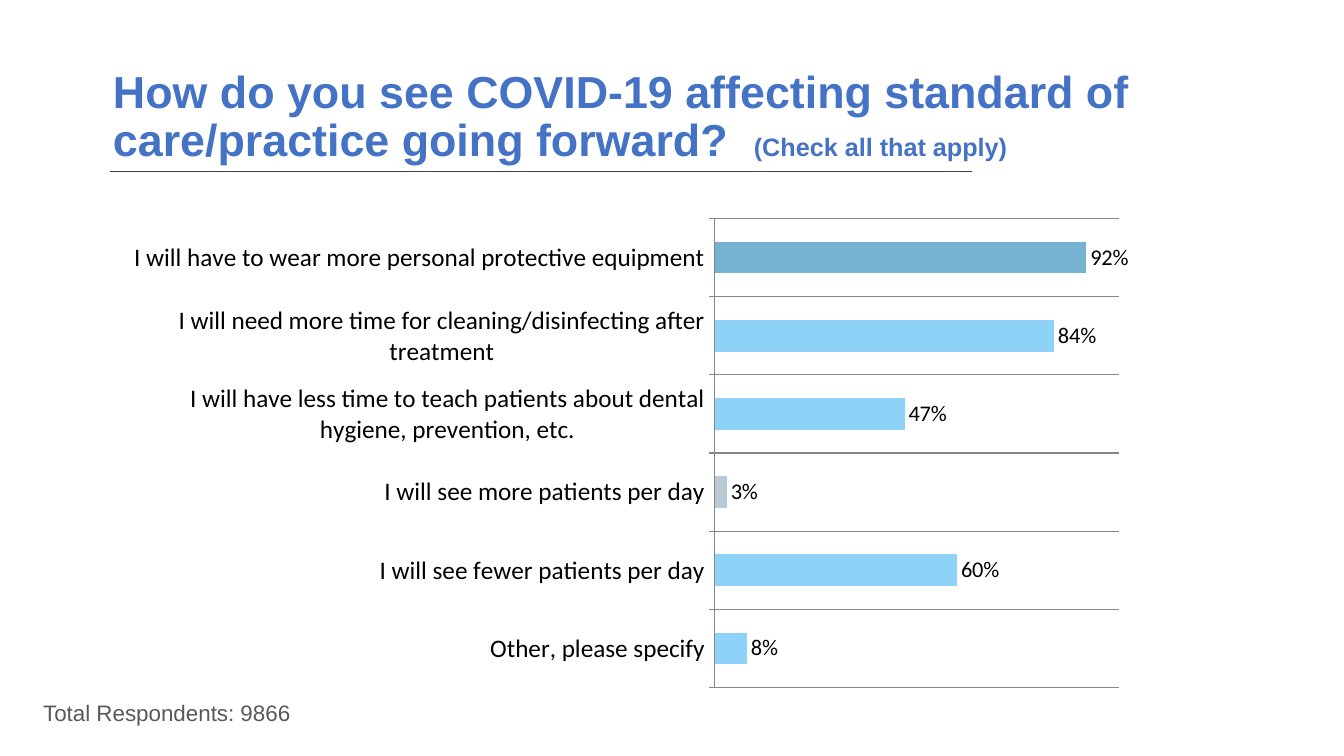
from lxml.etree import SubElement
from pptx import Presentation
from pptx.chart.data import CategoryChartData
from pptx.dml.color import RGBColor
from pptx.enum.chart import XL_CHART_TYPE, XL_LABEL_POSITION, XL_TICK_MARK
from pptx.enum.shapes import MSO_CONNECTOR
from pptx.enum.text import MSO_ANCHOR
from pptx.oxml.ns import qn
from pptx.util import Inches, Pt

QUESTION = "How do you see COVID-19 affecting standard of care/practice going forward?"
HINT = "(Check all that apply)"
RESPONDENTS = "Total Respondents: 9866"
ANSWERS = [
    ("I will have to wear more personal protective equipment", 0.92),
    ("I will need more time for cleaning/disinfecting after treatment", 0.84),
    ("I will have less time to teach patients about dental hygiene, prevention, etc.", 0.47),
    ("I will see more patients per day", 0.03),
    ("I will see fewer patients per day", 0.60),
    ("Other, please specify", 0.08),
]
BAR_COLOR = "8ED3F7"
POINT_COLORS = {0: "75B2D2", 3: "BACAD4"}
TITLE_COLOR, NOTE_COLOR, GRID_COLOR = "4472C4", "595959", "878787"
PLOT_AREA = {"x": 0.586, "y": 0.019, "w": 0.394, "h": 0.962}


def color(hex_string):
    return RGBColor.from_string(hex_string)


def add_span(para, text, size, hex_color, bold=False, spacing=0):
    """Add a run; spacing is extra space after each letter, in points."""
    span = para.add_run()
    span.text = text
    span.font.name = "Arial"
    span.font.size = Pt(size)
    span.font.bold = bold
    span.font.color.rgb = color(hex_color)
    if spacing:
        span.font._element.set("spc", str(spacing * 100))


def fill_bar(target, hex_color):
    target.format.fill.solid()
    target.format.fill.fore_color.rgb = color(hex_color)


def style_line(line, hex_color, width):
    line.color.rgb = color(hex_color)
    line.width = Pt(width)


def style_font(font, size):
    font.name = "Calibri"
    font.size = Pt(size)
    font.color.rgb = color("000000")


def place_plot_area(chart):
    """Fix the inner plot area as fractions of the chart."""
    plot_area = chart._chartSpace.chart.plotArea
    layout = plot_area.find(qn("c:layout"))
    if layout is None:
        layout = SubElement(plot_area, qn("c:layout"))
        plot_area.insert(0, layout)
    manual = SubElement(layout, qn("c:manualLayout"))
    settings = {"layoutTarget": "inner", "xMode": "edge", "yMode": "edge", **PLOT_AREA}
    for name, value in settings.items():
        SubElement(manual, qn(f"c:{name}")).set("val", str(value))


def add_title(page):
    title = page.shapes.title
    title.left, title.top = Inches(1.02), Inches(0.88)
    title.width, title.height = Inches(12), Inches(0.58)
    title.text_frame.vertical_anchor = MSO_ANCHOR.MIDDLE
    title.text_frame.word_wrap = True
    para = title.text_frame.paragraphs[0]
    para.alignment = 1
    para.line_spacing = 0.9
    add_span(para, QUESTION, 32, TITLE_COLOR, bold=True)
    add_span(para, " ", 32, TITLE_COLOR, bold=True, spacing=9)
    add_span(para, HINT, 18, TITLE_COLOR, bold=True)


def add_rule(page):
    rule = page.shapes.add_connector(
        MSO_CONNECTOR.STRAIGHT, Inches(1.09), Inches(1.7), Inches(9.64), Inches(1.7))
    style_line(rule.line, "404040", 0.5)
    SubElement(rule._element.spPr, qn("a:effectLst"))


def add_respondents(page):
    box = page.shapes.add_textbox(Inches(0.33), Inches(6.92), Inches(12), Inches(0.42))
    box.text_frame.word_wrap = True
    para = box.text_frame.paragraphs[0]
    para.line_spacing = 0.9
    add_span(para, RESPONDENTS, 16, NOTE_COLOR)


def add_answers_chart(page):
    data = CategoryChartData(number_format="0%")
    data.categories = [answer for answer, share in ANSWERS]
    data.add_series("Series 1", [share for answer, share in ANSWERS])
    chart = page.shapes.add_chart(
        XL_CHART_TYPE.BAR_CLUSTERED, Inches(1.13), Inches(2.08),
        Inches(10.17), Inches(4.83), data).chart
    chart.has_legend = False
    chart.has_title = False
    style_font(chart.font, 18)
    place_plot_area(chart)

    answers = chart.category_axis
    answers.reverse_order = True
    answers.major_tick_mark = XL_TICK_MARK.OUTSIDE
    answers.has_major_gridlines = True
    style_font(answers.tick_labels.font, 18)
    style_line(answers.format.line, GRID_COLOR, 0.75)
    style_line(answers.major_gridlines.format.line, GRID_COLOR, 0.75)

    shares = chart.value_axis
    shares.minimum_scale, shares.maximum_scale = 0, 1
    shares.has_major_gridlines = False
    shares.visible = False

    plot = chart.plots[0]
    plot.gap_width = 150
    plot.vary_by_categories = False
    series = plot.series[0]
    fill_bar(series, BAR_COLOR)
    for index, hex_color in POINT_COLORS.items():
        fill_bar(series.points[index], hex_color)
    labels = series.data_labels
    labels.show_value = True
    labels.position = XL_LABEL_POSITION.OUTSIDE_END
    labels.number_format = "0%"
    labels.number_format_is_linked = False
    style_font(labels.font, 16)


def main():
    deck = Presentation()
    deck.slide_width, deck.slide_height = Inches(13.33), Inches(7.5)
    page = deck.slides.add_slide(deck.slide_layouts.get_by_name("Title Only"))
    add_rule(page)
    add_title(page)
    add_respondents(page)
    add_answers_chart(page)
    deck.save("out.pptx")


if __name__ == "__main__":
    main()
